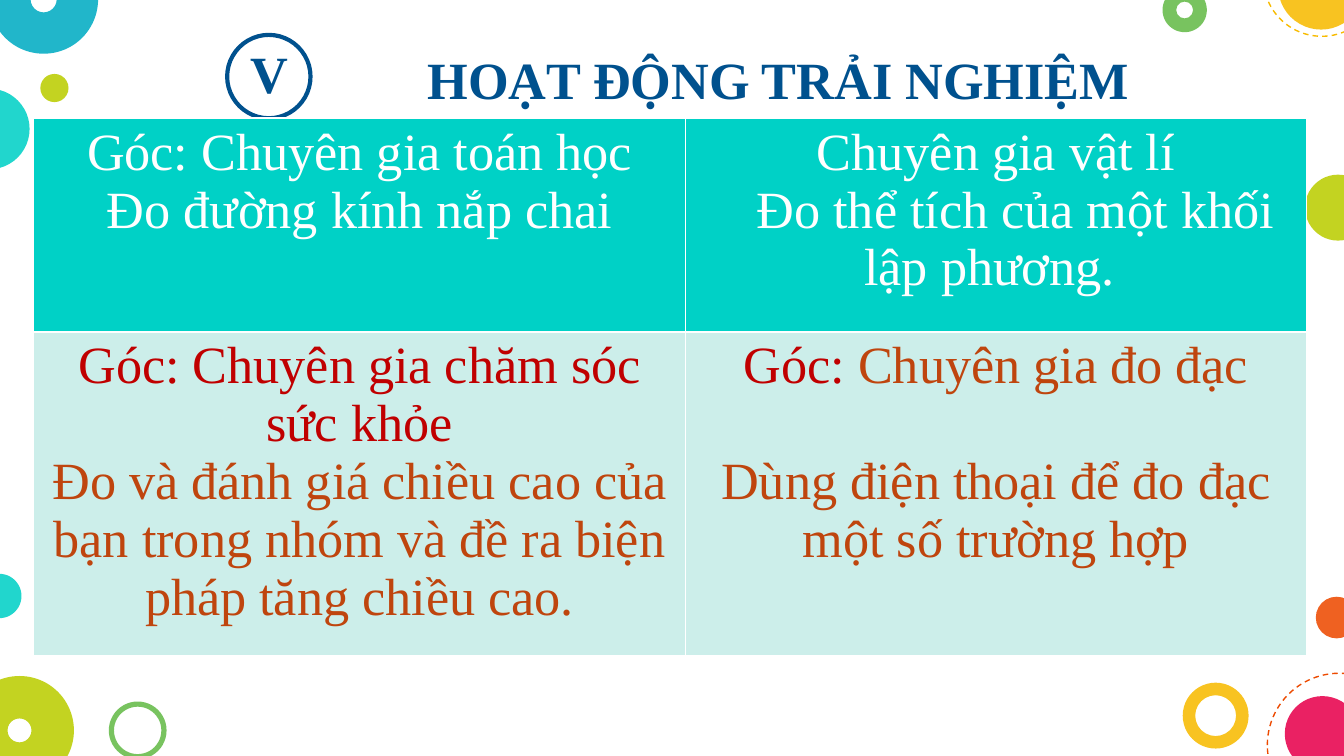
from lxml import etree
from pptx import Presentation
from pptx.dml.color import RGBColor
from pptx.enum.dml import MSO_LINE
from pptx.enum.shapes import MSO_SHAPE
from pptx.enum.text import MSO_ANCHOR, MSO_AUTO_SIZE, PP_ALIGN
from pptx.oxml.ns import qn
from pptx.util import Inches, Pt

ELLIPSE, DONUT = MSO_SHAPE.OVAL, MSO_SHAPE.DONUT
CENTER, TOP = PP_ALIGN.CENTER, MSO_ANCHOR.TOP
DASH = MSO_LINE.DASH
NO_AUTOFIT = MSO_AUTO_SIZE.NONE

WHITE = RGBColor(0xFF, 0xFF, 0xFF)
NAVY = RGBColor(0x00, 0x51, 0x8E)
TURQUOISE = RGBColor(0x00, 0xD1, 0xC6)
PALE_TURQUOISE = RGBColor(0xCC, 0xEE, 0xEA)
CYAN = RGBColor(0x00, 0xAC, 0xC3)
YELLOW = RGBColor(0xF8, 0xBB, 0x00)
LIME = RGBColor(0xBB, 0xCD, 0x00)
GREEN = RGBColor(0x65, 0xBB, 0x48)
ORANGE = RGBColor(0xED, 0x4A, 0x00)
PINK = RGBColor(0xE8, 0x00, 0x4C)
RED = RGBColor(0xC0, 0x00, 0x00)
RUST = RGBColor(0xBF, 0x45, 0x0E)

# Left, top, diameter, colour, ring thickness ratio (None for a solid disc)
DISCS = [
    (-0.38, 0.66, 0.6, TURQUOISE, None),
    (8.8, 5.08, 0.49, YELLOW, 0.19),
    (-0.08, -0.41, 0.81, CYAN, 0.38),
    (0.3, 0.55, 0.21, LIME, None),
    (0.81, 5.22, 0.43, GREEN, 0.09),
    (9.79, 4.44, 0.31, ORANGE, None),
    (-0.26, 5.03, 0.81, LIME, 0.39),
    (9.56, 5.18, 0.56, PINK, None),
    (8.65, -0.09, 0.33, GREEN, 0.31),
    (9.51, -0.42, 0.64, YELLOW, None),
    (9.71, 1.3, 0.49, LIME, None),
    (-0.17, 4.27, 0.33, TURQUOISE, None),
]
DASHED_RINGS = [(9.43, 5.01, 1.07, ORANGE), (9.4, -0.6, 0.87, YELLOW)]

# Each cell is a list of paragraphs: runs, first-line indent, space before
CORNERS = [
    [
        [([("Góc: Chuyên gia toán học", WHITE)], 0, 0),
         ([("Đo đường kính nắp chai", WHITE)], 0, 0)],
        [([("Chuyên gia vật lí", WHITE)], 0, 0),
         ([("Đo thể tích của một khối lập phương. ", WHITE)], 0.29, 0)],
    ],
    [
        [([("Góc: Chuyên gia chăm sóc sức khỏe", RED)], 0, 0),
         ([("Đo và đánh giá chiều cao của bạn trong nhóm và đề ra biện "
            "pháp tăng chiều cao.", RUST)], 0, 0)],
        [([("Góc: ", RED), ("Chuyên gia đo đạc", RUST)], 0, 0),
         ([("Dùng điện thoại để đo đạc một số trường hợp", RUST)], 0, 31)],
    ],
]


class SlideBuilder:
    font_name = "Times New Roman"
    font_size = Pt(28)

    def __init__(self, slide):
        self.slide = slide

    def run(self, paragraph, text, color, bold=False):
        run = paragraph.add_run()
        run.text = text
        font = run.font
        font.name, font.size, font.bold = self.font_name, self.font_size, bold
        font.color.rgb = color

    def circle(self, left, top, diameter, kind=ELLIPSE):
        shape = self.slide.shapes.add_shape(
            kind, Inches(left), Inches(top), Inches(diameter), Inches(diameter))
        shape.shadow.inherit = False
        return shape

    def disc(self, left, top, diameter, color, thickness):
        shape = self.circle(left, top, diameter, DONUT if thickness else ELLIPSE)
        if thickness:
            shape.adjustments[0] = thickness
        shape.line.fill.background()
        shape.fill.solid()
        shape.fill.fore_color.rgb = color
        color_element = shape.element.spPr.find(qn("a:solidFill"))[0]
        etree.SubElement(color_element, qn("a:alpha"), val="87000")

    def ring(self, left, top, diameter, color, width, dash=None):
        shape = self.circle(left, top, diameter)
        shape.fill.background()
        shape.line.color.rgb = color
        shape.line.width = Pt(width)
        if dash:
            shape.line.dash_style = dash

    def heading(self, shape, text):
        frame = shape.text_frame
        frame.word_wrap = True
        frame.auto_size = NO_AUTOFIT
        frame.vertical_anchor = TOP
        paragraph = frame.paragraphs[0]
        paragraph.alignment = CENTER
        self.run(paragraph, text, NAVY, bold=True)

    def title(self, left, top, width, height, text):
        shape = self.slide.shapes.title
        shape.left, shape.top = Inches(left), Inches(top)
        shape.width, shape.height = Inches(width), Inches(height)
        self.heading(shape, text)

    def text_box(self, left, top, width, height, text):
        shape = self.slide.shapes.add_textbox(
            Inches(left), Inches(top), Inches(width), Inches(height))
        self.heading(shape, text)

    def cell(self, cell, paragraphs, fill):
        cell.margin_left = cell.margin_right = Inches(0.07)
        cell.margin_top = cell.margin_bottom = Inches(0.04)
        frame = cell.text_frame
        for index, (runs, indent, space_before) in enumerate(paragraphs):
            paragraph = frame.add_paragraph() if index else frame.paragraphs[0]
            paragraph.alignment = CENTER
            if indent:
                paragraph._p.get_or_add_pPr().set("indent", str(Inches(indent)))
            if space_before:
                paragraph.space_before = Pt(space_before)
            for text, color in runs:
                self.run(paragraph, text, color)
        properties = cell._tc.get_or_add_tcPr()
        for side in ("a:lnL", "a:lnR", "a:lnT", "a:lnB"):
            border = etree.SubElement(properties, qn(side), w=str(Pt(1)))
            solid = etree.SubElement(border, qn("a:solidFill"))
            etree.SubElement(solid, qn("a:srgbClr"), val=str(WHITE))
        cell.fill.solid()
        cell.fill.fore_color.rgb = fill

    def table(self, left, top, widths, heights, rows, fills):
        table = self.slide.shapes.add_table(
            len(heights), len(widths), Inches(left), Inches(top),
            Inches(sum(widths)), Inches(sum(heights))).table
        for column, width in zip(table.columns, widths):
            column.width = Inches(width)
        for row, height, contents, fill in zip(table.rows, heights, rows, fills):
            row.height = Inches(height)
            for cell, paragraphs in zip(row.cells, contents):
                self.cell(cell, paragraphs, fill)


def main():
    presentation = Presentation()
    presentation.slide_width = Inches(10)
    presentation.slide_height = Inches(10 * 9 / 16)
    slide = presentation.slides.add_slide(presentation.slide_layouts[5])
    builder = SlideBuilder(slide)

    # Decorative circles along the edges
    for disc in DISCS:
        builder.disc(*disc)
    for ring in DASHED_RINGS:
        builder.ring(*ring, width=0.75, dash=DASH)

    # Section number and title
    builder.ring(1.69, 0.26, 0.62, NAVY, width=2.25)
    builder.text_box(1.6, 0.26, 0.81, 0.57, "V")
    builder.title(2.4, 0.3, 6.78, 0.57, "HOẠT ĐỘNG TRẢI NGHIỆM")

    # Activity corners
    builder.table(0.25, 0.88, [4.85, 4.62], [1.59, 2.41], CORNERS,
                  [TURQUOISE, PALE_TURQUOISE])

    presentation.save("out.pptx")


if __name__ == "__main__":
    main()
